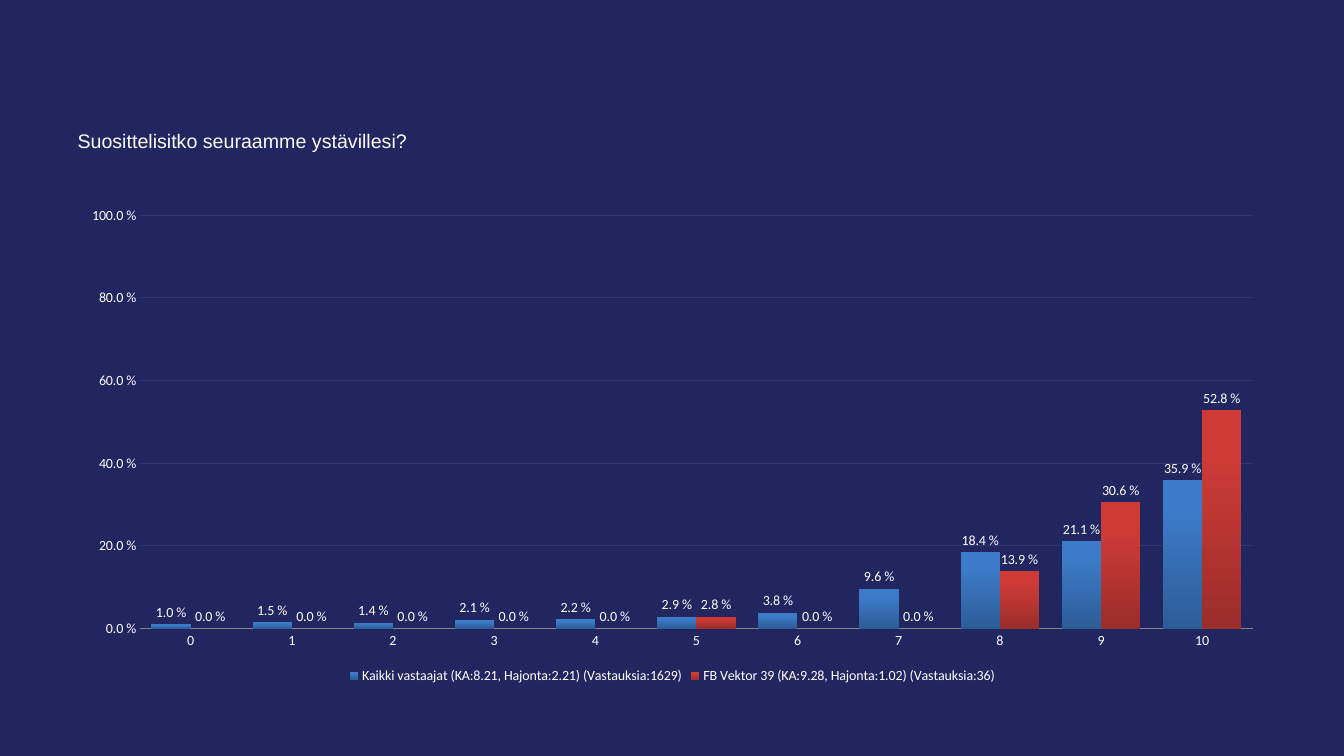
from pptx import Presentation
from pptx.chart.data import CategoryChartData
from pptx.dml.color import RGBColor
from pptx.enum.chart import XL_CHART_TYPE, XL_LABEL_POSITION, XL_LEGEND_POSITION, XL_TICK_MARK
from pptx.enum.text import MSO_ANCHOR, PP_ALIGN
from pptx.oxml import parse_xml
from pptx.oxml.ns import nsdecls
from pptx.util import Cm, Pt

COLUMNS = XL_CHART_TYPE.COLUMN_CLUSTERED
OUTSIDE_END = XL_LABEL_POSITION.OUTSIDE_END
BOTTOM = XL_LEGEND_POSITION.BOTTOM
NO_TICK = XL_TICK_MARK.NONE
TOP = MSO_ANCHOR.TOP
LEFT = PP_ALIGN.LEFT

NAVY = RGBColor(0x21, 0x25, 0x60)
OFF_WHITE = RGBColor(0xFC, 0xFC, 0xFC)
WHITE = RGBColor(0xFF, 0xFF, 0xFF)
GRID = RGBColor(0x2A, 0x37, 0x73)
AXIS = RGBColor(0x86, 0x86, 0x86)
BLUES = (RGBColor(0x2C, 0x5D, 0x98), RGBColor(0x3C, 0x7B, 0xC7))
REDS = (RGBColor(0x9B, 0x2D, 0x2A), RGBColor(0xCE, 0x3B, 0x37))

PERCENT = "0.0\\ %"
SCORES = [str(score) for score in range(11)]
RESPONSES = [
    ("Kaikki vastaajat (KA:8.21, Hajonta:2.21) (Vastauksia:1629)", BLUES,
     (0.01, 0.015, 0.014, 0.021, 0.022, 0.029, 0.038, 0.096, 0.184, 0.211, 0.359)),
    ("FB Vektor 39 (KA:9.28, Hajonta:1.02) (Vastauksia:36)", REDS,
     (0, 0, 0, 0, 0, 0.028, 0, 0, 0.139, 0.306, 0.528)),
]
PLOT_AREA = {"x": 0.06, "y": 0.04, "w": 0.92, "h": 0.84}


def write(frame, text, *, size, color, font, align=LEFT, anchor=TOP):
    """Fill a text frame with one formatted paragraph."""
    frame.word_wrap = True
    frame.vertical_anchor = anchor
    paragraph = frame.paragraphs[0]
    paragraph.alignment = align
    run = paragraph.add_run()
    run.text = text
    run.font.size = Pt(size)
    run.font.name = font
    run.font.color.rgb = color


class SurveySlide:
    """Hold the style and the slide of one survey question."""

    heading_font = "Arial"
    chart_font = "Calibri"
    left, width = Cm(1.7), Cm(30.48)

    def __init__(self, deck):
        """Add a title-only slide with a navy background."""
        self.slide = deck.slides.add_slide(deck.slide_layouts[5])
        self.slide.background.fill.solid()
        self.slide.background.fill.fore_color.rgb = NAVY

    def question(self, text, top, height):
        """Place the survey question in the title placeholder."""
        heading = self.slide.shapes.title
        heading.left, heading.top = self.left, top
        heading.width, heading.height = self.width, height
        write(heading.text_frame, text, size=14, color=OFF_WHITE, font=self.heading_font)

    def distribution(self, scores, responses, top, height):
        """Draw the share of answers for each score."""
        shares = CategoryChartData(number_format=PERCENT)
        shares.categories = scores
        for group, _, values in responses:
            shares.add_series(group, values)
        chart = self.slide.shapes.add_chart(
            COLUMNS, self.left, top, self.width, height, shares).chart
        chart.has_title = False
        self.chart_text(chart.font)
        chart.has_legend = True
        chart.legend.position = BOTTOM
        chart.legend.include_in_layout = False
        columns = chart.plots[0]
        columns.gap_width = 58
        columns.overlap = 0
        columns.vary_by_categories = False
        for series, (_, shades, _) in zip(columns.series, responses):
            self.shade(series.format.fill, shades)
            self.label(series.data_labels)
        self.axes(chart)
        self.place_plot(chart)

    def chart_text(self, font):
        """Apply the chart's text style."""
        font.size = Pt(10)
        font.name = self.chart_font
        font.color.rgb = WHITE

    def shade(self, fill, shades):
        """Shade columns from dark at the foot to bright at the top."""
        fill.gradient()
        fill.gradient_angle = 90
        for stop, color, position in zip(fill.gradient_stops, shades, (0, 0.8)):
            stop.color.rgb = color
            stop.position = position

    def label(self, labels):
        """Show percentages above the columns."""
        labels.show_value = True
        labels.number_format = PERCENT
        labels.number_format_is_linked = False
        labels.position = OUTSIDE_END
        self.chart_text(labels.font)

    def axes(self, chart):
        """Format the score and percentage axes."""
        for axis in (chart.category_axis, chart.value_axis):
            axis.major_tick_mark = axis.minor_tick_mark = NO_TICK
        chart.category_axis.format.line.color.rgb = AXIS
        chart.category_axis.format.line.width = Pt(0.75)
        percent = chart.value_axis
        percent.minimum_scale, percent.maximum_scale = 0, 1
        percent.major_unit = 0.2
        percent.tick_labels.number_format = PERCENT
        percent.tick_labels.number_format_is_linked = False
        percent.format.line.fill.background()
        percent.has_major_gridlines = True
        percent.major_gridlines.format.line.color.rgb = GRID
        percent.major_gridlines.format.line.width = Pt(0.75)

    def place_plot(self, chart):
        """Fix the inner plot area within the chart."""
        extents = "".join(f'<c:{key} val="{part}"/>' for key, part in PLOT_AREA.items())
        layout = parse_xml(
            f'<c:layout {nsdecls("c")}><c:manualLayout><c:layoutTarget val="inner"/>'
            f'<c:xMode val="edge"/><c:yMode val="edge"/>{extents}'
            '</c:manualLayout></c:layout>')
        plot_area = chart.plots[0]._element.getparent()
        for automatic in plot_area.findall(layout.tag):
            plot_area.remove(automatic)
        plot_area.insert(0, layout)


def main():
    """Build and save the survey slide."""
    deck = Presentation()
    deck.slide_width, deck.slide_height = Cm(33.87), Cm(19.05)
    survey = SurveySlide(deck)
    survey.question("Suosittelisitko seuraamme ystävillesi?", Cm(3.12), Cm(1.5))
    survey.distribution(SCORES, RESPONSES, Cm(4.93), Cm(12.4))
    deck.save("out.pptx")


if __name__ == "__main__":
    main()
